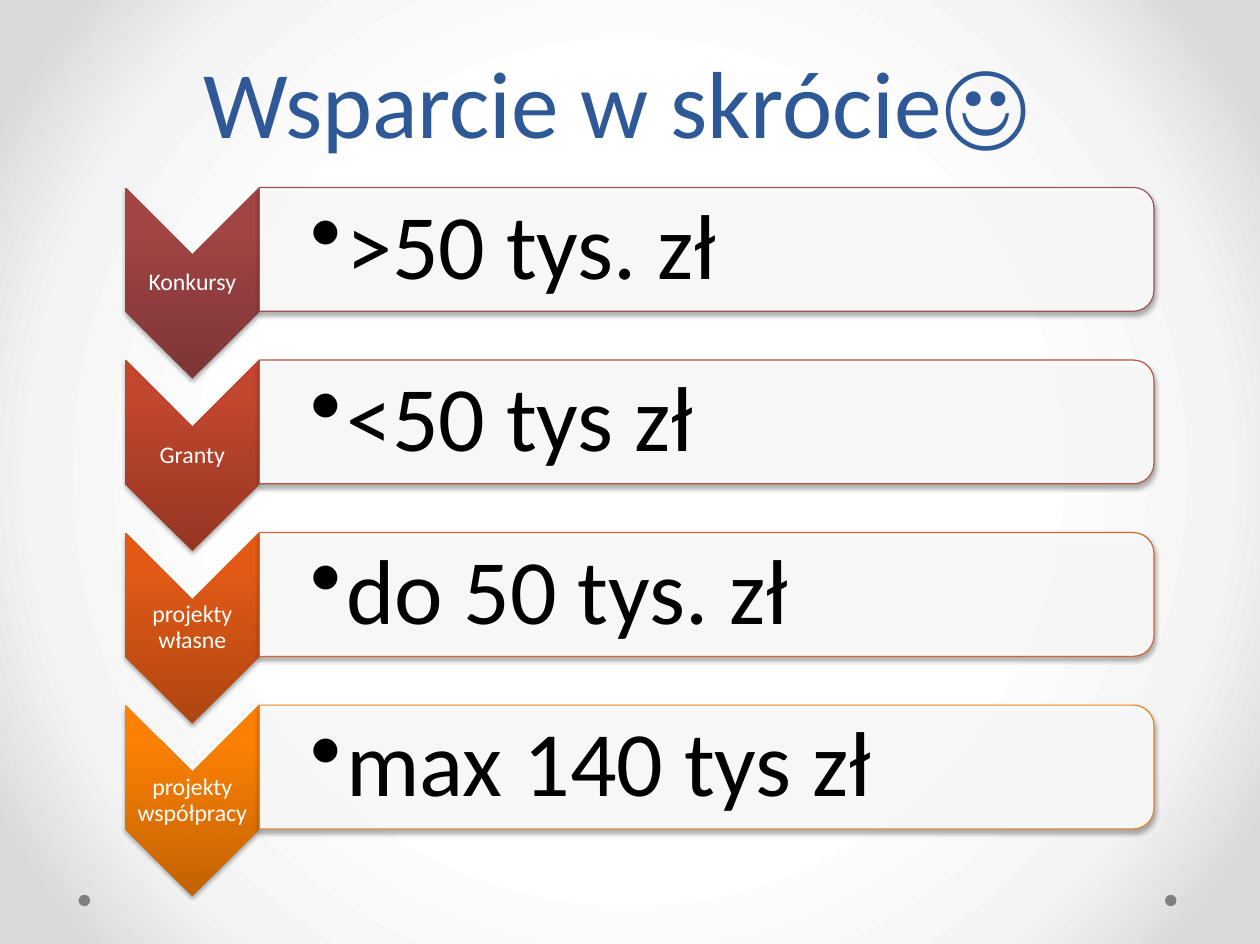
from lxml import etree
from pptx import Presentation
from pptx.dml.color import RGBColor
from pptx.enum.shapes import MSO_SHAPE
from pptx.enum.text import MSO_ANCHOR, MSO_AUTO_SIZE, PP_ALIGN
from pptx.oxml.ns import qn
from pptx.util import Pt

TITLE = "Wsparcie w skrócie☺"
ROWS = [
    ("Konkursy", ">50 tys. zł", ("7D3535", "A24545", "A44343"), RGBColor(0x9C, 0x52, 0x52)),
    ("Granty", "<50 tys zł", ("953623", "C1472E", "C5452B"), RGBColor(0xB6, 0x54, 0x41)),
    ("projekty własne", "do 50 tys. zł", ("AE4511", "E25A16", "E75912"), RGBColor(0xD0, 0x65, 0x2F)),
    ("projekty współpracy", "max 140 tys zł", ("C26203", "FB8004", "FF8002"), RGBColor(0xE6, 0x84, 0x22)),
]
BACKGROUND_STOPS = [(50, "FFFFFF"), (76, "F4F4F4"), (92, "DADADA")]
CHEVRON_POSITIONS = (0, 80, 100)

FONT = "Calibri"
BLUE = RGBColor(0x2F, 0x58, 0x97)
GRAY = RGBColor(0x80, 0x80, 0x80)
WHITE = RGBColor(0xFF, 0xFF, 0xFF)
BLACK = RGBColor(0, 0, 0)

ELLIPSE = MSO_SHAPE.OVAL
CHEVRON = MSO_SHAPE.CHEVRON
CARD = MSO_SHAPE.ROUND_2_SAME_RECTANGLE
CENTER = PP_ALIGN.CENTER
LEFT = PP_ALIGN.LEFT
MIDDLE = MSO_ANCHOR.MIDDLE
BOTTOM = MSO_ANCHOR.BOTTOM
NO_AUTOFIT = MSO_AUTO_SIZE.NONE

SLIDE_WIDTH, SLIDE_HEIGHT = 794, 595
ROW_TOP, ROW_PITCH = 118.2, 108.75
CHEVRON_LEFT, CHEVRON_WIDTH, CHEVRON_HEIGHT = 79, 84.4, 120.4
CARD_LEFT = CHEVRON_LEFT + CHEVRON_WIDTH
CARD_WIDTH, CARD_HEIGHT = 563.8, 78
LABEL_OFFSET, LABEL_HEIGHT = 42.2, 36
DOT_TOP, DOT_SIZE = 564, 7.2
DOT_LEFTS = (734.2, 49.6)


def add_element(parent, tag, **attributes):
    element = etree.SubElement(parent, qn(tag))
    for name, value in attributes.items():
        element.set(name, str(value))
    return element


def set_gradient(fill, properties, stops):
    fill.gradient()
    gradient = properties.find(qn("a:gradFill"))
    for child in list(gradient):
        gradient.remove(child)
    gradient.set("rotWithShape", "0")
    stop_list = add_element(gradient, "a:gsLst")
    for position, color in stops:
        stop = add_element(stop_list, "a:gs", pos=position * 1000)
        add_element(stop, "a:srgbClr", val=color)
    return gradient


def add_shadow(shape):
    effects = shape._element.spPr.find(qn("a:effectLst"))
    shadow = add_element(effects, "a:outerShdw", blurRad=Pt(3.1), dist=Pt(1.8),
                         dir=5400000, rotWithShape=0)
    color = add_element(shadow, "a:srgbClr", val="000000")
    add_element(color, "a:alpha", val=35000)


def add_plain_shape(slide, kind, left, top, width, height):
    shape = slide.shapes.add_shape(kind, Pt(left), Pt(top), Pt(width), Pt(height))
    shape.shadow.inherit = False
    shape.line.fill.background()
    return shape


def add_turned_shape(slide, kind, left, top, width, height):
    shift = (width - height) / 2
    shape = add_plain_shape(slide, kind, left + shift, top - shift, height, width)
    shape.rotation = 90
    add_shadow(shape)
    return shape


def write_text(shape, text, size, color, alignment, anchor, margins, spacing):
    frame = shape.text_frame
    frame.text = text
    frame.word_wrap = True
    frame.auto_size = NO_AUTOFIT
    frame.vertical_anchor = anchor
    frame.margin_left, frame.margin_top, frame.margin_right, frame.margin_bottom = map(Pt, margins)
    paragraph = frame.paragraphs[0]
    paragraph.alignment = alignment
    paragraph.line_spacing = spacing
    font = paragraph.runs[0].font
    font.name, font.size, font.color.rgb = FONT, Pt(size), color
    return paragraph


def add_text(slide, box, *style):
    return write_text(slide.shapes.add_textbox(*map(Pt, box)), *style)


def add_row(slide, top, label, amount, colors, outline):
    chevron = add_turned_shape(slide, CHEVRON, CHEVRON_LEFT, top, CHEVRON_WIDTH, CHEVRON_HEIGHT)
    gradient = set_gradient(chevron.fill, chevron._element.spPr, zip(CHEVRON_POSITIONS, colors))
    add_element(gradient, "a:lin", ang=16200000, scaled=0)
    add_text(slide, (CHEVRON_LEFT, top + LABEL_OFFSET, CHEVRON_WIDTH, LABEL_HEIGHT),
             label, 15, WHITE, CENTER, MIDDLE, (0.75, 0.75, 0.75, 0.75), 0.9)

    card = add_turned_shape(slide, CARD, CARD_LEFT, top, CARD_WIDTH, CARD_HEIGHT)
    card.fill.solid()
    card.fill.fore_color.rgb = WHITE
    color = card._element.spPr.find(qn("a:solidFill")).find(qn("a:srgbClr"))
    add_element(color, "a:alpha", val=90000)
    card.line.color.rgb = outline
    card.line.width = Pt(0.75)

    paragraph = add_text(slide, (CARD_LEFT, top + 3.8, CARD_WIDTH - 3.8, CARD_HEIGHT - 7.6),
                         amount, 58, BLACK, LEFT, MIDDLE, (32.4, 2.9, 2.9, 2.9), 0.9)
    properties = paragraph._p.get_or_add_pPr()
    properties.set("marL", str(Pt(22.5)))
    properties.set("indent", str(Pt(-22.5)))
    add_element(properties, "a:buChar", char="•")


def main():
    presentation = Presentation()
    presentation.slide_width = Pt(SLIDE_WIDTH)
    presentation.slide_height = Pt(SLIDE_HEIGHT)
    slide = presentation.slides.add_slide(presentation.slide_layouts[5])

    background = slide.background.fill
    background.gradient()
    properties = slide.element.find(".//" + qn("p:bgPr"))
    gradient = set_gradient(background, properties, BACKGROUND_STOPS)
    circle = add_element(gradient, "a:path", path="circle")
    add_element(circle, "a:fillToRect", l=50000, t=50000, r=50000, b=50000)

    for left in DOT_LEFTS:
        dot = add_plain_shape(slide, ELLIPSE, left, DOT_TOP, DOT_SIZE, DOT_SIZE)
        dot.fill.solid()
        dot.fill.fore_color.rgb = GRAY

    title = slide.shapes.title
    title.left, title.top, title.width, title.height = Pt(31), Pt(-1.4), Pt(715), Pt(105)
    write_text(title, TITLE, 60, BLUE, CENTER, BOTTOM, (8, 4, 8, 4), Pt(63.9))

    for index, row in enumerate(ROWS):
        add_row(slide, ROW_TOP + index * ROW_PITCH, *row)

    presentation.save("out.pptx")


if __name__ == "__main__":
    main()
